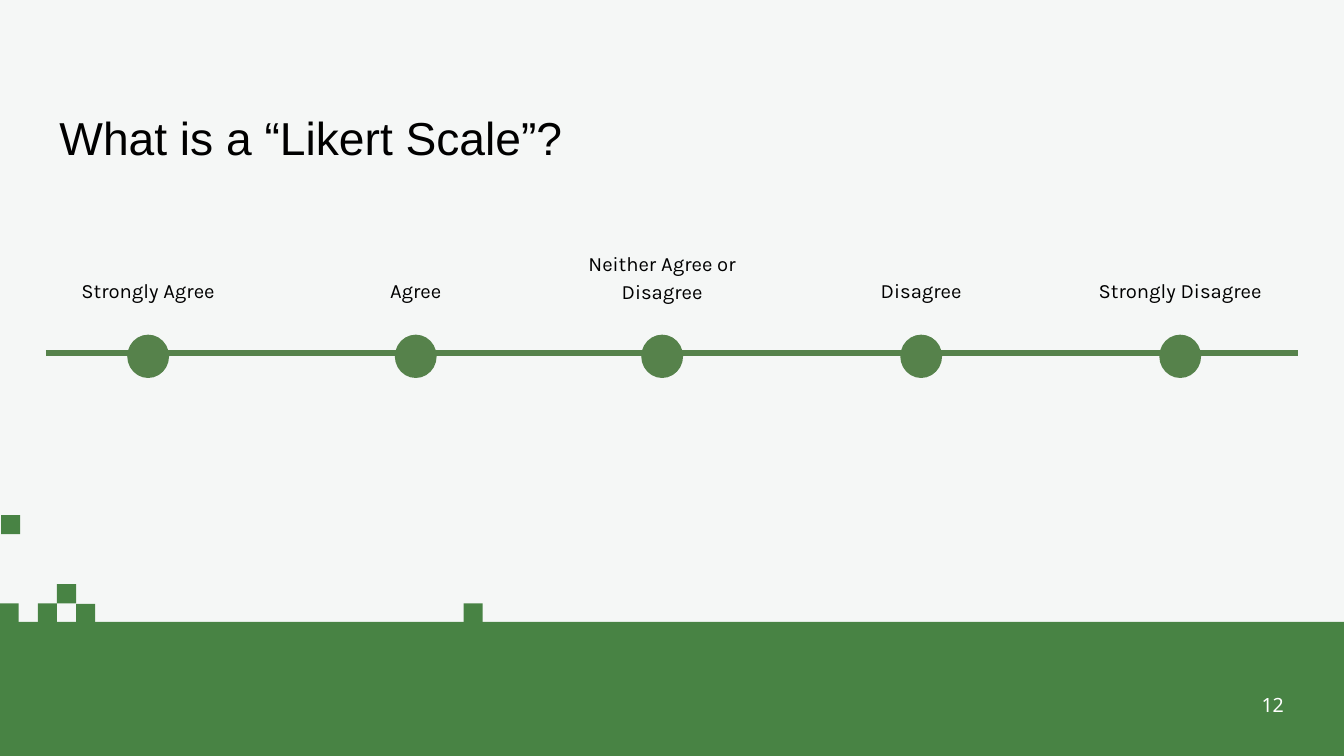
from pptx import Presentation
from pptx.dml.color import RGBColor
from pptx.enum.shapes import MSO_CONNECTOR, MSO_SHAPE
from pptx.enum.text import MSO_ANCHOR as Anchor, PP_ALIGN as Align
from pptx.oxml.ns import qn
from pptx.util import Inches, Pt
from lxml import etree

BAND_GREEN = "488344"
SCALE_GREEN = "56824B"

prs = Presentation()
prs.slide_width = Inches(26.67)
prs.slide_height = Inches(15)
slide = prs.slides.add_slide(prs.slide_layouts[6])


def add_solid(kind, left, top, width, height, color):
    solid = slide.shapes.add_shape(
        kind, Inches(left), Inches(top), Inches(width), Inches(height))
    solid.shadow.inherit = False
    solid.fill.solid()
    solid.fill.fore_color.rgb = RGBColor.from_string(color)
    solid.line.fill.background()


def add_text(text, left, top, width, height, font, size, color="000000",
             align=Align.LEFT, anchor=Anchor.TOP, spacing=1.0, wrap=True):
    box = slide.shapes.add_textbox(
        Inches(left), Inches(top), Inches(width), Inches(height))
    frame = box.text_frame
    frame.margin_left = frame.margin_right = Inches(0.27)
    frame.margin_top = frame.margin_bottom = Inches(0.27)
    frame.word_wrap = wrap
    frame.vertical_anchor = anchor
    frame.text = text
    paragraph = frame.paragraphs[0]
    paragraph.alignment = align
    paragraph.line_spacing = spacing
    run_font = paragraph.runs[0].font
    run_font.name = font
    run_font.size = Pt(size)
    run_font.color.rgb = RGBColor.from_string(color)


# Background, bottom band and the pixels rising from it
slide.background.fill.solid()
slide.background.fill.fore_color.rgb = RGBColor.from_string("F5F7F6")
add_solid(MSO_SHAPE.RECTANGLE, 0, 12.34, 26.67, 2.66, BAND_GREEN)
pixels = [(-0.01, 11.97), (1.13, 11.59), (0.75, 11.97),
          (0.02, 10.22), (1.51, 11.98), (9.2, 11.97)]
for left, top in pixels:
    add_solid(MSO_SHAPE.RECTANGLE, left, top, 0.38, 0.38, BAND_GREEN)

# Page number
add_text("12", 24.76, 13.45, 0.99, 1.06, "Noto Sans", 28, "FFFFFF",
         Align.CENTER, Anchor.MIDDLE, wrap=False)

# Title
add_text("What is a “Likert Scale”?", 0.91, 1.9, 24.85, 1.67, "Arial", 66)

# Scale line
scale = slide.shapes.add_connector(
    MSO_CONNECTOR.STRAIGHT, Inches(0.91), Inches(7.01), Inches(25.76), Inches(7.01))
scale.line.color.rgb = RGBColor.from_string(SCALE_GREEN)
scale.line.width = Pt(8)
etree.SubElement(scale._element.spPr, qn("a:effectLst"))

# Scale points, each with its label centred above: centre, label top, label
points = [
    (2.94, 5.17, "Strongly Agree"),
    (8.25, 5.17, "Agree"),
    (13.14, 4.65, "Neither Agree or Disagree"),
    (18.28, 5.17, "Disagree"),
    (23.42, 5.17, "Strongly Disagree"),
]
dot_width, label_width = 0.83, 4.03
for center, label_top, label in points:
    add_solid(MSO_SHAPE.OVAL, center - dot_width / 2, 6.64, dot_width, 0.86, SCALE_GREEN)
    add_text(label, center - label_width / 2, label_top, label_width, 6.45 - label_top,
             "Karla", 29, align=Align.CENTER, spacing=1.15)

prs.save("out.pptx")
